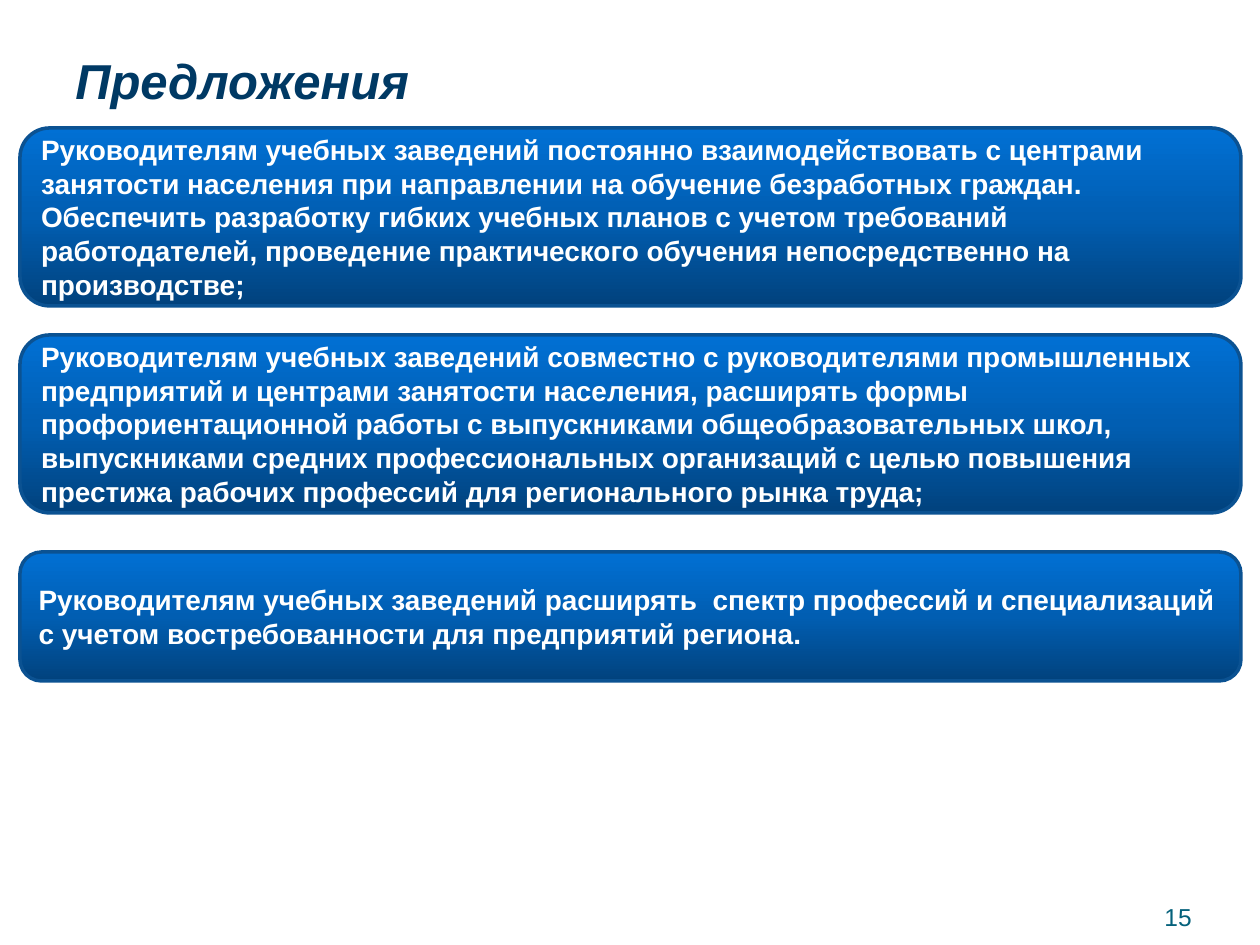
from copy import deepcopy

from pptx import Presentation
from pptx.dml.color import RGBColor
from pptx.enum.shapes import MSO_SHAPE as Shape
from pptx.enum.text import MSO_ANCHOR as Anchor, PP_ALIGN as Align
from pptx.oxml.ns import qn
from pptx.util import Emu, Pt

PX = 914400 / 126
COLORS = {
    "title": "003964", "number": "04617B", "text": "FFFFFF", "outline": "0B5292",
    "dark": "01427D", "middle": "015EB2", "light": "0170D4",
}
GRADIENT = [(0, "dark"), (0.5, "middle"), (1, "light")]
TITLE_FONT = {"size": Pt(28), "bold": True, "italic": True}
CARD_FONT = {"size": Pt(16), "bold": True}
NUMBER_FONT = {"size": Pt(14)}

CARD_LEFT, CARD_WIDTH = 20, 1221
# Top, height and wording of each proposal
PROPOSALS = [
    (128, 178, "Руководителям учебных заведений постоянно взаимодействовать с центрами "
     "занятости населения при направлении на обучение безработных граждан. "
     "Обеспечить разработку гибких учебных планов с учетом требований работодателей, "
     "проведение практического обучения непосредственно на производстве;"),
    (335, 178, "Руководителям учебных заведений совместно с руководителями промышленных "
     "предприятий и центрами занятости населения, расширять формы "
     "профориентационной работы с выпускниками общеобразовательных школ, "
     "выпускниками средних профессиональных организаций с целью повышения "
     "престижа рабочих профессий для регионального рынка труда;"),
    (552, 129, "Руководителям учебных заведений расширять  спектр профессий и специализаций "
     "с учетом востребованности для предприятий региона."),
]


def px(value):
    return Emu(round(value * PX))


def color(name):
    return RGBColor.from_string(COLORS[name])


def write(shape, text, color_name, font, anchor=Anchor.TOP, inset_top=6):
    frame = shape.text_frame
    frame.word_wrap = True
    frame.vertical_anchor = anchor
    frame.margin_top = px(inset_top)
    para = frame.paragraphs[0]
    para.alignment = Align.LEFT
    span = para.add_run()
    span.text = text
    span.font.name = "Arial"
    span.font.color.rgb = color(color_name)
    for name, value in font.items():
        setattr(span.font, name, value)


def add_label(page, box, text, color_name, font, **layout):
    label = page.shapes.add_textbox(*map(px, box))
    write(label, text, color_name, font, **layout)


def fill_gradient(shape):
    shape.fill.gradient()
    shape.fill.gradient_angle = 90
    # The default gradient has two stops; add the third
    stop_list = shape.element.find(".//" + qn("a:gsLst"))
    stop_list.append(deepcopy(stop_list[0]))
    for stop, (position, name) in zip(shape.fill.gradient_stops, GRADIENT):
        stop.position = position
        stop.color.rgb = color(name)


def add_card(page, box, text):
    card = page.shapes.add_shape(Shape.ROUNDED_RECTANGLE, *map(px, box))
    card.shadow.inherit = False
    fill_gradient(card)
    card.line.color.rgb = color("outline")
    card.line.width = Pt(2)
    write(card, text, "text", CARD_FONT, anchor=Anchor.MIDDLE)


def main():
    deck = Presentation()
    deck.slide_width, deck.slide_height = px(1260), px(945)
    page = deck.slides.add_slide(deck.slide_layouts[6])

    # Heading and page number
    add_label(page, (63, 38, 1134, 117), "Предложения", "title", TITLE_FONT, inset_top=12)
    add_label(page, (1152, 896, 108, 43), "15", "number", NUMBER_FONT)

    # Proposal cards
    for top, height, text in PROPOSALS:
        add_card(page, (CARD_LEFT, top, CARD_WIDTH, height), text)

    deck.save("out.pptx")


if __name__ == "__main__":
    main()
